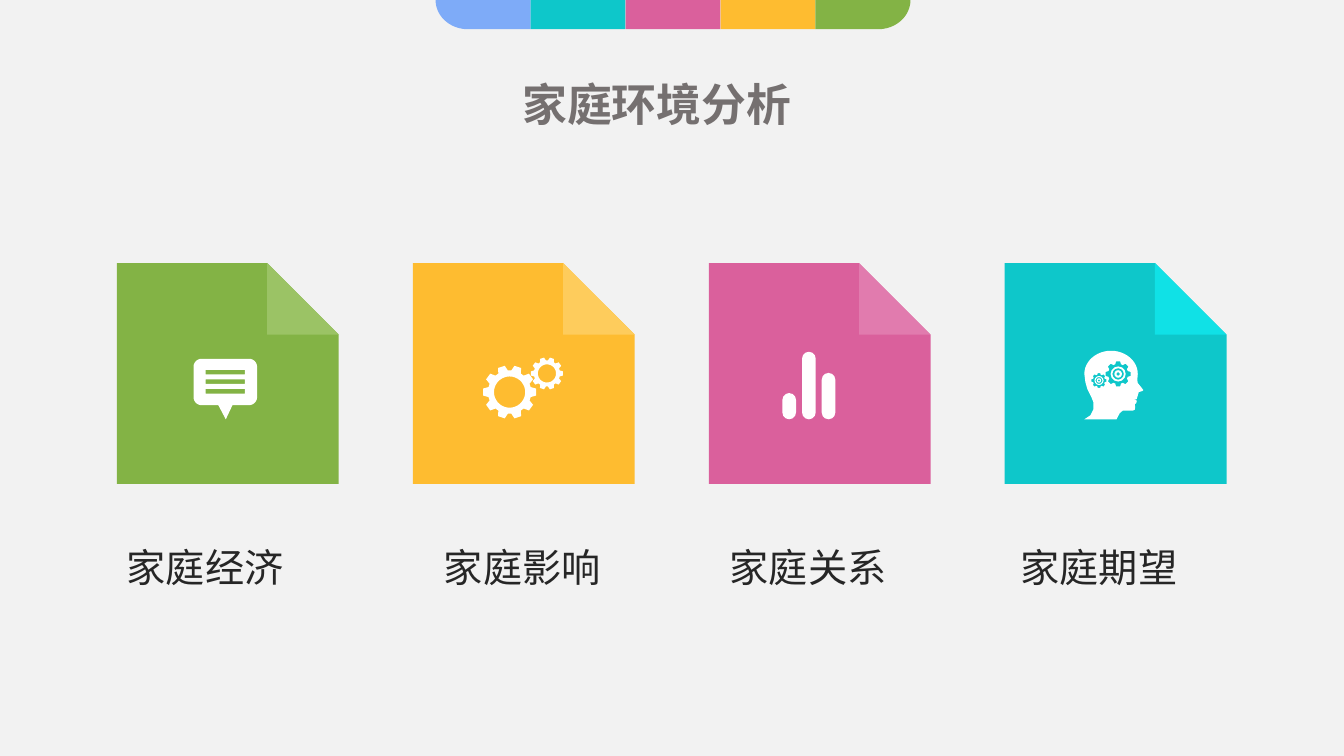
from math import cos, pi, sin

from lxml import etree
from pptx import Presentation
from pptx.dml.color import RGBColor
from pptx.enum.shapes import MSO_SHAPE
from pptx.enum.text import MSO_ANCHOR, MSO_AUTO_SIZE, PP_ALIGN
from pptx.oxml.ns import qn
from pptx.util import Inches, Pt

RECTANGLE, DONUT = MSO_SHAPE.RECTANGLE, MSO_SHAPE.DONUT
PILL = MSO_SHAPE.ROUNDED_RECTANGLE
TOP, LEFT, NO_FIT = MSO_ANCHOR.TOP, PP_ALIGN.LEFT, MSO_AUTO_SIZE.NONE

BACKGROUND = RGBColor(0xF2, 0xF2, 0xF2)
TITLE_GREY = RGBColor(0x75, 0x70, 0x70)
LABEL_BLACK = RGBColor(0x26, 0x26, 0x26)
WHITE = RGBColor(0xFF, 0xFF, 0xFF)
BLUE = RGBColor(0x7E, 0xAB, 0xF8)
TEAL = RGBColor(0x0E, 0xC7, 0xCA)
PINK = RGBColor(0xDA, 0x60, 0x9C)
AMBER = RGBColor(0xFE, 0xBC, 0x30)
GREEN = RGBColor(0x83, 0xB3, 0x45)
LIGHT_TEAL = RGBColor(0x10, 0xE1, 0xE6)
LIGHT_PINK = RGBColor(0xE1, 0x7B, 0xAE)
LIGHT_AMBER = RGBColor(0xFE, 0xCC, 0x5C)
LIGHT_GREEN = RGBColor(0x9B, 0xC3, 0x65)
FONT = "Noto Sans CJK JP"

PAGE_LEFT, PAGE_TOP, PAGE_PITCH = 1.16, 2.61, 2.935
PAGE_WIDTH, PAGE_HEIGHT, FOLD = 2.2, 2.19, 0.71


def paint(shape, colour):
    """Give a shape a flat fill without line or shadow."""
    shape.shadow.inherit = False
    shape.fill.solid()
    shape.fill.fore_color.rgb = colour
    shape.line.fill.background()


def place(shapes, kind, left, top, width, height, colour):
    """Add a flat preset shape."""
    shape = shapes.add_shape(kind, Inches(left), Inches(top), Inches(width), Inches(height))
    paint(shape, colour)
    return shape


def outline(shapes, left, top, contours, colour):
    """Add a flat outline; contours inside the first one are holes."""
    scaled = [[(Inches(left + x), Inches(top + y)) for x, y in contour] for contour in contours]
    builder = shapes.build_freeform(*scaled[0][0])
    builder.add_line_segments(scaled[0][1:])
    for hole in scaled[1:]:
        builder.move_to(*hole[0])
        builder.add_line_segments(hole[1:])
    paint(builder.convert_to_shape(), colour)


def arc(x, y, radius_x, radius_y, start, end, steps=12):
    """Return points on an ellipse between two angles in degrees."""
    angles = [(start + (end - start) * i / steps) * pi / 180 for i in range(steps + 1)]
    return [(x + radius_x * cos(a), y + radius_y * sin(a)) for a in angles]


def box(left, top, width, height):
    """Return the corners of a rectangle."""
    return [(left, top), (left + width, top), (left + width, top + height), (left, top + height)]


def cog(x, y, radius, root, teeth):
    """Return the toothed rim of a gear."""
    step = 2 * pi / teeth
    profile = [(root, -0.37), (radius, -0.21), (radius, 0.21), (root, 0.37)]
    return [(x + r * cos(step * (tooth + share)), y + r * sin(step * (tooth + share)))
            for tooth in range(teeth) for r, share in profile]


def write(frame, words, size, colour, bold=False):
    """Write one unwrapped line at the top left of a text frame."""
    frame.word_wrap = False
    frame.auto_size = NO_FIT
    frame.vertical_anchor = TOP
    line = frame.paragraphs[0]
    line.alignment = LEFT
    line.line_spacing = 1.0
    run = line.add_run()
    run.text = words
    run.font.size, run.font.bold, run.font.name = Pt(size), bold, FONT
    run.font.color.rgb = colour
    etree.SubElement(run.font._element, qn("a:ea"), typeface=FONT)


def ribbon(shapes, left, width, height):
    """Draw the five-colour band with rounded lower ends."""
    block, curve = width / 5, 0.32
    left_end = [(block, 0), (block, height)] + arc(curve, 0, curve, height, 90, 180)
    right_end = [(block - x, y) for x, y in left_end]
    outline(shapes, left, 0, [left_end], BLUE)
    for column, colour in enumerate((TEAL, PINK, AMBER), start=1):
        place(shapes, RECTANGLE, left + column * block, 0, block, height, colour)
    outline(shapes, left + 4 * block, 0, [right_end], GREEN)


def chat_icon(shapes, left, top):
    """Draw a speech bubble with three lines cut out."""
    width, height, radius = 0.63, 0.46, 0.08
    bubble = (arc(radius, radius, radius, radius, 180, 270)
              + arc(width - radius, radius, radius, radius, 270, 360)
              + arc(width - radius, height - radius, radius, radius, 0, 90)
              + arc(radius, height - radius, radius, radius, 90, 180))
    lines = [box(0.12, 0.11 + row * 0.095, 0.39, 0.045) for row in range(3)]
    outline(shapes, left, top, [[(0.23, 0.43), (0.4, 0.43), (0.32, 0.6)]], WHITE)
    outline(shapes, left, top, [bubble] + lines, WHITE)


def gears_icon(shapes, left, top):
    """Draw a large and a small gear."""
    for x, y, radius, root, hole in ((0.26, 0.34, 0.265, 0.215, 0.155),
                                     (0.63, 0.155, 0.16, 0.13, 0.09)):
        outline(shapes, left, top, [cog(x, y, radius, root, 10),
                                    arc(x, y, hole, hole, 0, 360, 36)], WHITE)


def bars_icon(shapes, left, top):
    """Draw three rounded bars on one base line."""
    for column, height in enumerate((0.26, 0.67, 0.46)):
        bar = place(shapes, PILL, left + column * 0.195, top + 0.67 - height, 0.135, height, WHITE)
        bar.adjustments[0] = 0.5


def head_icon(shapes, left, top):
    """Draw a head in profile with two gears cut out."""
    face = [(0.53, 0.23), (0.525, 0.29), (0.53, 0.32), (0.57, 0.37), (0.585, 0.39),
            (0.575, 0.4), (0.54, 0.41), (0.525, 0.46), (0.52, 0.48), (0.49, 0.485),
            (0.515, 0.49), (0.52, 0.5), (0.515, 0.52), (0.5, 0.53), (0.505, 0.56),
            (0.5, 0.585), (0.48, 0.595), (0.38, 0.595), (0.35, 0.62), (0.32, 0.68)]
    neck = [(0, 0.68), (0.06, 0.64), (0.09, 0.58), (0.09, 0.51), (0.07, 0.46),
            (0.03, 0.38), (0.01, 0.31)]
    skull = arc(0.265, 0.23, 0.265, 0.23, 180, 360, 24)
    gears = ((0.145, 0.295, 0.075, 0.06), (0.335, 0.23, 0.125, 0.1))
    outline(shapes, left, top, [skull + face + neck]
            + [cog(x, y, radius, root, 8) for x, y, radius, root in gears], WHITE)
    for x, y, radius, _ in gears:
        for share, thickness in ((0.6, 0.12), (0.3, 0.28)):
            ring = radius * share
            donut = place(shapes, DONUT, left + x - ring, top + y - ring, 2 * ring, 2 * ring, WHITE)
            donut.adjustments[0] = thickness


def page(shapes, left, top, topic):
    """Draw one folded page with its icon and its label."""
    words, colour, fold_colour, icon, icon_x, icon_y, label_x = topic
    crease = PAGE_WIDTH - FOLD
    sheet = [(0, 0), (crease, 0), (PAGE_WIDTH, FOLD), (PAGE_WIDTH, PAGE_HEIGHT), (0, PAGE_HEIGHT)]
    flap = [(crease, 0), (PAGE_WIDTH, FOLD), (crease, FOLD)]
    outline(shapes, left, top, [sheet], colour)
    outline(shapes, left, top, [flap], fold_colour)
    icon(shapes.add_group_shape().shapes, left + icon_x, top + icon_y)
    label = shapes.add_textbox(Inches(left + label_x), Inches(top + 2.73), Inches(1.76), Inches(0.77))
    write(label.text_frame, words, 28, LABEL_BLACK)


def main():
    """Build the slide and save it."""
    deck = Presentation()
    deck.slide_width, deck.slide_height = Inches(13.33), Inches(7.5)
    slide = deck.slides.add_slide(deck.slide_layouts[5])
    slide.background.fill.solid()
    slide.background.fill.fore_color.rgb = BACKGROUND
    ribbon(slide.shapes, 4.32, 4.71, 0.29)

    title = slide.shapes.title
    title.left, title.top = Inches(5.08), Inches(0.71)
    title.width, title.height = Inches(2.88), Inches(0.63)
    write(title.text_frame, "家庭环境分析", 32, TITLE_GREY, bold=True)

    topics = (
        ("家庭经济", GREEN, LIGHT_GREEN, chat_icon, 0.76, 0.95, 0),
        ("家庭影响", AMBER, LIGHT_AMBER, gears_icon, 0.7, 0.94, 0.21),
        ("家庭关系", PINK, LIGHT_PINK, bars_icon, 0.73, 0.88, 0.11),
        ("家庭期望", TEAL, LIGHT_TEAL, head_icon, 0.79, 0.87, 0.06),
    )
    for column, topic in enumerate(topics):
        page(slide.shapes, PAGE_LEFT + column * PAGE_PITCH, PAGE_TOP, topic)
    deck.save("out.pptx")


if __name__ == "__main__":
    main()
